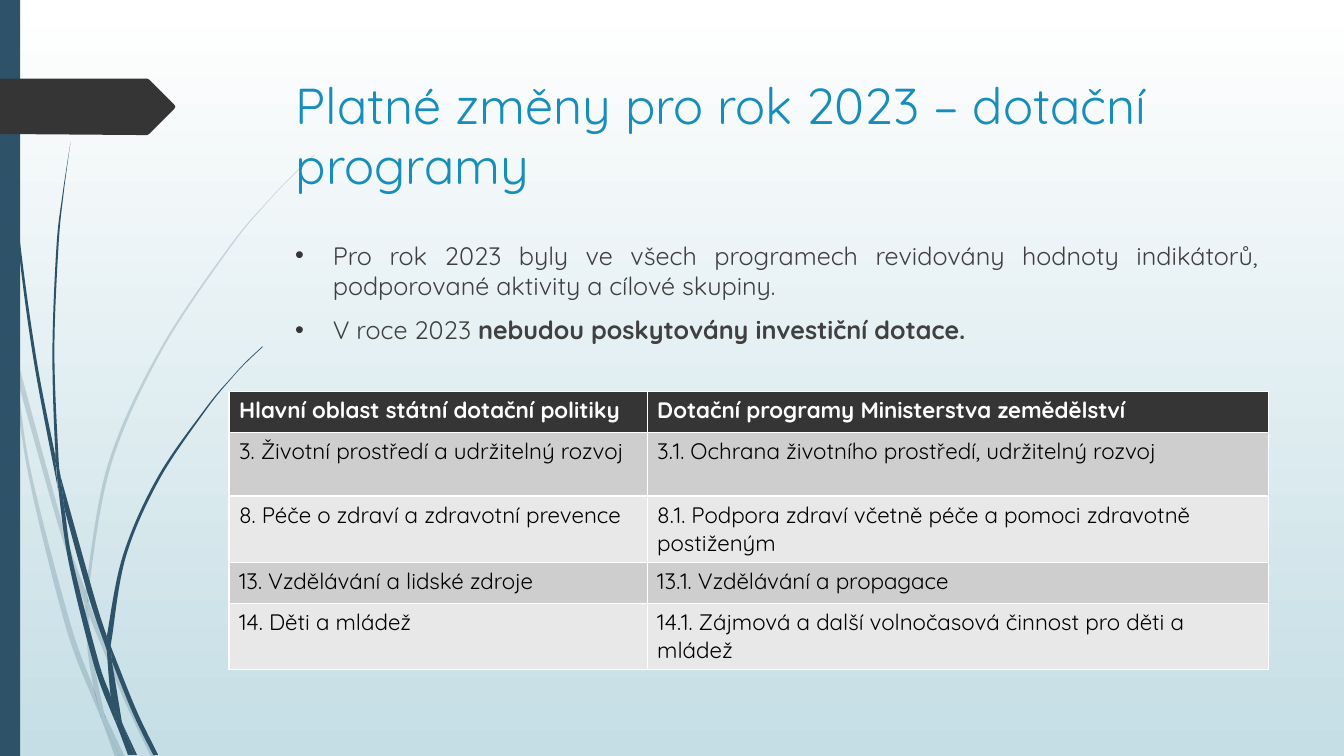
"""Build the slide on subsidy programme changes valid for 2023."""
from dataclasses import dataclass

from lxml import etree
from pptx import Presentation
from pptx.dml.color import RGBColor
from pptx.enum.shapes import MSO_SHAPE
from pptx.enum.text import MSO_ANCHOR, MSO_AUTO_SIZE, PP_ALIGN
from pptx.oxml.ns import qn
from pptx.util import Cm, Pt

RECTANGLE = MSO_SHAPE.RECTANGLE
TOP = MSO_ANCHOR.TOP
NO_FIT = MSO_AUTO_SIZE.NONE
LEFT, JUSTIFY = PP_ALIGN.LEFT, PP_ALIGN.JUSTIFY


@dataclass(frozen=True)
class Theme:
    font: str = "Quicksand"
    title: str = "178DBB"
    body: str = "404040"
    dark: str = "353535"
    stalk: str = "2E5369"
    white: str = "FFFFFF"
    black: str = "000000"
    sky: str = "C5DEE5"
    bands: tuple = ("CECECE", "E8E8E8")
    title_size: int = 36
    body_size: int = 18
    table_size: int = 16


THEME = Theme()
TITLE = "Platné změny pro rok 2023 – dotační programy"
BULLETS = [
    [("Pro rok 2023 byly ve všech programech revidovány hodnoty indikátorů, "
      "podporované aktivity a cílové skupiny.", False)],
    [("V roce 2023 ", False), ("nebudou poskytovány investiční dotace.", True)],
]
PROGRAMMES = [
    ("Hlavní oblast státní dotační politiky", "Dotační programy Ministerstva zemědělství"),
    ("3. Životní prostředí a udržitelný rozvoj",
     "3.1. Ochrana životního prostředí, udržitelný rozvoj"),
    ("8. Péče o zdraví a zdravotní prevence",
     "8.1. Podpora zdraví včetně péče a pomoci zdravotně postiženým"),
    ("13. Vzdělávání a lidské zdroje", "13.1. Vzdělávání a propagace"),
    ("14. Děti a mládež", "14.1. Zájmová a další volnočasová činnost pro děti a mládež"),
]
COLUMN_WIDTHS = (10.54, 15.65)
ROW_HEIGHTS = (1.04, 1.6, 1.67, 1.04, 1.67)
UNIT = Cm(0.0254)

FAINT_STALKS = [
    [[(11, 350), (9, 322), (0, 282)], [(0, 299), (10, 344), (11, 350)]],
    [[(14, 345), (62, 520), (85, 586)], [(84, 599), (58, 522), (17, 376)]],
    [[(88, 596), (92, 607), (127, 692), (155, 751)], [(150, 751), (123, 694), (88, 610)]],
    [[(105, 711), (124, 751)], [(119, 751), (105, 711)]],
    [[(11, 350), (17, 376), (31, 469), (70, 619), (93, 683), (99, 707), (101, 714)],
     [(92, 693), (65, 621), (28, 470), (11, 350)]],
    [[(84, 599), (88, 610), (91, 646), (103, 706), (105, 711)],
     [(96, 692), (93, 683), (87, 646), (84, 599)]],
    [[(88, 596), (88, 584), (110, 462), (160, 349), (229, 245), (268, 198), (290, 175),
      (312, 154)],
     [(312, 153), (289, 175), (268, 197), (228, 244), (158, 348), (107, 461), (85, 584),
      (85, 586)]],
    [[(101, 714), (114, 751)], [(119, 751), (101, 714)]],
    [[(88, 608), (88, 610), (88, 596)], [(85, 586), (84, 599)]],
    [[(93, 683), (99, 707), (101, 714), (119, 751)], [(105, 711), (96, 692), (93, 683)]],
]
SOLID_STALKS = [
    [[(3, 0), (4, 48), (7, 110), (17, 233), (33, 355), (56, 477), (57, 481)],
     [(55, 457), (55, 453), (36, 355), (19, 232), (8, 109), (5, 48), (4, 0)]],
    [[(60, 472), (93, 590), (106, 631)], [(106, 645), (88, 592), (64, 505)]],
    [[(110, 641), (113, 649), (136, 706), (157, 749)], [(152, 749), (132, 708), (111, 656)]],
    [[(57, 477), (64, 505), (72, 556), (98, 657), (110, 691), (116, 717), (117, 722)],
     [(111, 708), (93, 659), (68, 557), (57, 477)]],
    [[(60, 472), (58, 453), (54, 349), (58, 245), (63, 193), (70, 141)],
     [(70, 141), (62, 193), (56, 245), (52, 349), (55, 449), (60, 472)]],
    [[(122, 719), (136, 749)], [(133, 749), (122, 719)]],
    [[(60, 472), (64, 505)], [(57, 477), (55, 453), (55, 449)]],
    [[(110, 641), (111, 633), (125, 552), (158, 476), (205, 406), (231, 374), (245, 359),
      (261, 344)],
     [(260, 344), (245, 358), (231, 373), (204, 405), (156, 474), (122, 551), (106, 631)]],
    [[(117, 722), (131, 749)], [(127, 749), (117, 722)]],
    [[(106, 645), (109, 651), (111, 656), (121, 716), (122, 719)],
     [(116, 706), (110, 691), (106, 645)]],
    [[(106, 631), (110, 641), (111, 656)], [(109, 651), (106, 645), (106, 633)]],
    [[(110, 691), (116, 706), (122, 719), (133, 749)],
     [(130, 749), (117, 722), (116, 717), (110, 691)]],
]
TAG = [[(0, 78), (146, 78)], [(148, 79), (173, 104)], [(174, 106), (173, 108)],
       [(148, 133), (146, 134)], [(136, 134), (0, 133)]]


def color(code):
    return RGBColor.from_string(code)


def paint(shape, code, opacity=100):
    shape.shadow.inherit = False
    shape.line.fill.background()
    shape.fill.solid()
    shape.fill.fore_color.rgb = color(code)
    if opacity < 100:
        tone = shape.element.spPr.find(".//" + qn("a:srgbClr"))
        etree.SubElement(tone, qn("a:alpha"), val=str(opacity * 1000))


def bend(nodes):
    """Turn the straight steps along one edge into smooth cubic curves."""
    spots = [(int(node.get("x")), int(node.get("y"))) for node in nodes]
    padded = [spots[0], *spots, spots[-1]]
    for index, node in enumerate(nodes[1:]):
        before, start, end, after = padded[index:index + 4]
        step = node.getparent()
        step.tag = qn("a:cubicBezTo")
        controls = (
            [s + (e - b) / 6 for b, s, e in zip(before, start, end)],
            [e - (a - s) / 6 for s, e, a in zip(start, end, after)],
        )
        for place, (x, y) in enumerate(controls):
            step.insert(place, etree.Element(qn("a:pt"), x=str(round(x)), y=str(round(y))))


def add_outline(shapes, edges, code, opacity=100):
    points = [(x * UNIT, y * UNIT) for edge in edges for x, y in edge]
    builder = shapes.build_freeform(*points[0], scale=1.0)
    builder.add_line_segments(points[1:], close=True)
    outline = builder.convert_to_shape()
    nodes = list(outline.element.iter(qn("a:pt")))
    first = 0
    for edge in edges:
        if len(edge) > 2:
            bend(nodes[first:first + len(edge)])
        first += len(edge)
    paint(outline, code, opacity)
    return outline


def add_span(para, text, size, code, bold=False):
    span = para.add_run()
    span.text = text
    span.font.name, span.font.size, span.font.bold = THEME.font, Pt(size), bold
    span.font.color.rgb = color(code)


def add_bullet(para):
    props = para._p.get_or_add_pPr()
    props.set("marL", str(Cm(0.95)))
    props.set("indent", str(-Cm(0.95)))
    tone = etree.SubElement(props, qn("a:buClr"))
    etree.SubElement(tone, qn("a:srgbClr"), val=THEME.dark)
    etree.SubElement(props, qn("a:buFont"), typeface="Arial")
    etree.SubElement(props, qn("a:buChar"), char="•")


def add_backdrop(page):
    fill = page.background.fill
    fill.gradient()
    fill.gradient_angle = 270
    for stop, code in zip(fill.gradient_stops, (THEME.white, THEME.sky)):
        stop.color.rgb = color(code)
    for stalks, opacity in ((FAINT_STALKS, 20), (SOLID_STALKS, 100)):
        group = page.shapes.add_group_shape()
        for edges in stalks:
            add_outline(group.shapes, edges, THEME.stalk, opacity)
    bar = page.shapes.add_shape(RECTANGLE, 0, 0, Cm(0.51), Cm(19.05))
    paint(bar, THEME.stalk)
    return add_outline(page.shapes, TAG, THEME.dark)


def add_title(page, tag):
    title = page.shapes.title
    tag.element.addnext(title.element)
    title.left, title.top, title.width, title.height = Cm(7.2), Cm(1.73), Cm(24.77), Cm(3.56)
    frame = title.text_frame
    frame.word_wrap, frame.auto_size, frame.vertical_anchor = True, NO_FIT, TOP
    para = frame.paragraphs[0]
    para.alignment = LEFT
    add_span(para, TITLE, THEME.title_size, THEME.title)


def add_body(page):
    frame = page.shapes.add_textbox(Cm(7.19), Cm(5.92), Cm(24.77), Cm(10.49)).text_frame
    frame.word_wrap = True
    for index, spans in enumerate(BULLETS):
        para = frame.add_paragraph() if index else frame.paragraphs[0]
        para.alignment, para.space_before = JUSTIFY, Pt(10)
        add_bullet(para)
        for text, bold in spans:
            add_span(para, text, THEME.body_size, THEME.body, bold)


def add_programmes(page):
    table = page.shapes.add_table(
        len(PROGRAMMES), len(COLUMN_WIDTHS), Cm(5.77), Cm(9.86),
        Cm(sum(COLUMN_WIDTHS)), Cm(sum(ROW_HEIGHTS))).table
    for column, width in zip(table.columns, COLUMN_WIDTHS):
        column.width = Cm(width)
    for index, (row, texts) in enumerate(zip(table.rows, PROGRAMMES)):
        row.height = Cm(ROW_HEIGHTS[index])
        header = index == 0
        for cell, text in zip(row.cells, texts):
            cell.fill.solid()
            cell.fill.fore_color.rgb = color(THEME.dark if header else THEME.bands[(index - 1) % 2])
            add_span(cell.text_frame.paragraphs[0], text, THEME.table_size,
                     THEME.white if header else THEME.black, header)


def main():
    deck = Presentation()
    deck.slide_width, deck.slide_height = Cm(33.87), Cm(19.05)
    page = deck.slides.add_slide(deck.slide_layouts[5])
    add_title(page, add_backdrop(page))
    add_body(page)
    add_programmes(page)
    deck.save("out.pptx")


if __name__ == "__main__":
    main()
